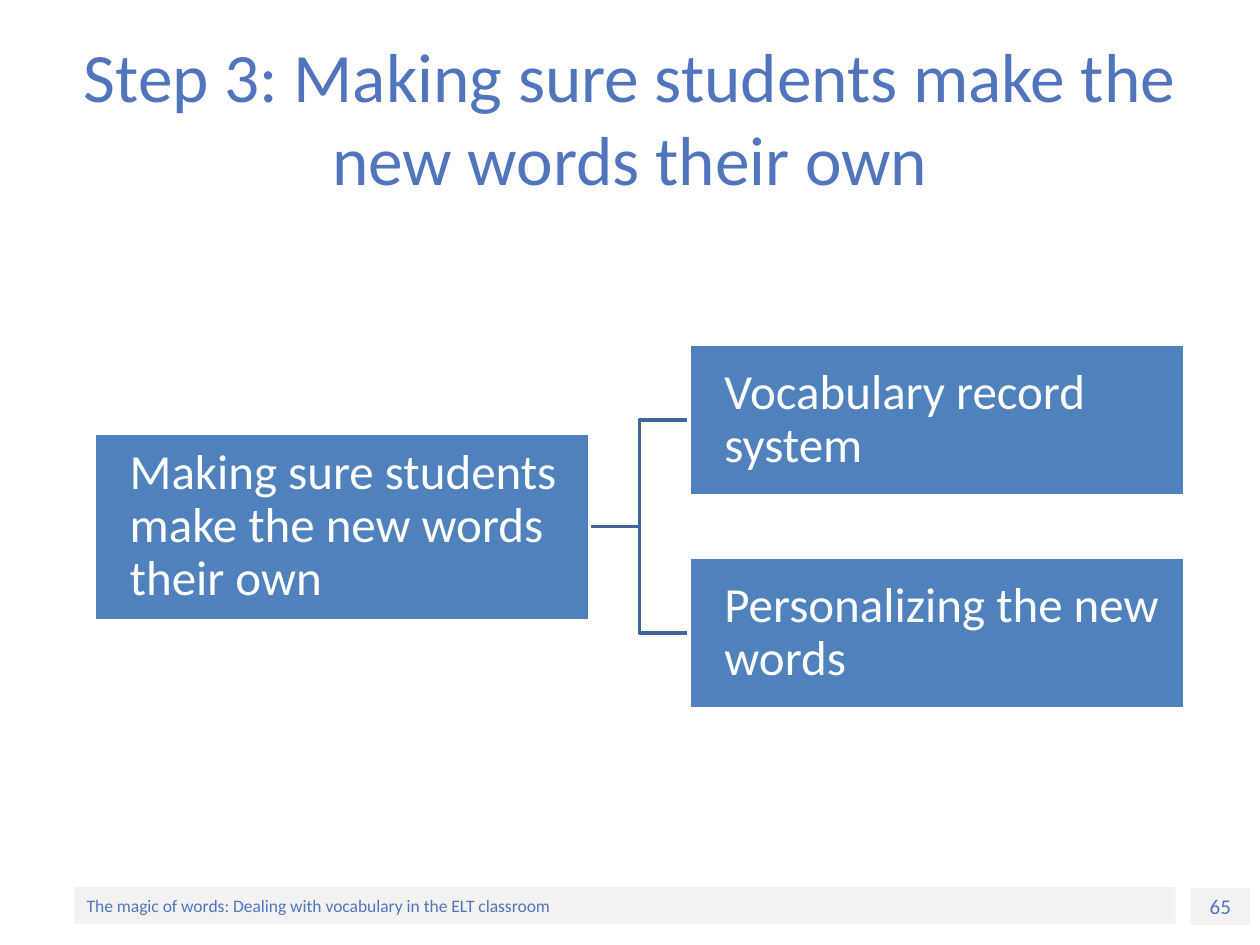
from pptx import Presentation
from pptx.dml.color import RGBColor
from pptx.enum.shapes import MSO_SHAPE as Shape
from pptx.enum.text import MSO_ANCHOR as Anchor, MSO_AUTO_SIZE as Auto, PP_ALIGN as Align
from pptx.util import Inches, Pt


def color(code):
    return RGBColor.from_string(code)


class Deck:
    font = "Calibri"
    ink = "5075BC"
    pale = "F2F2F2"
    blue = "4F81BD"
    dark = "3F6797"
    white = "FFFFFF"

    def __init__(self, slide):
        self.slide = slide

    def text(self, shape, lines, size, ink, align=Align.LEFT):
        frame = shape.text_frame
        frame.word_wrap = True
        frame.auto_size = Auto.NONE
        frame.vertical_anchor = Anchor.MIDDLE
        para = frame.paragraphs[0]
        para.alignment = align
        for i, line in enumerate(lines):
            if i:
                para.add_line_break()
            run = para.add_run()
            run.text = line
            run.font.name = self.font
            run.font.size = Pt(size)
            run.font.color.rgb = color(ink)
        return frame

    def title(self, line, x, y, w, h):
        shape = self.slide.shapes.title
        shape.left, shape.top = Inches(x), Inches(y)
        shape.width, shape.height = Inches(w), Inches(h)
        self.text(shape, [line], 39.6, self.ink, Align.CENTER)

    def rect(self, x, y, w, h, fill):
        shape = self.slide.shapes.add_shape(
            Shape.RECTANGLE, Inches(x), Inches(y), Inches(w), Inches(h))
        shape.shadow.inherit = False
        shape.fill.solid()
        shape.fill.fore_color.rgb = color(fill)
        shape.line.fill.background()
        return shape

    def band(self, line, x, y, w, h, size, align=Align.LEFT):
        self.text(self.rect(x, y, w, h, self.pale), [line], size, self.ink, align)

    def node(self, lines, x, mid, w, h):
        shape = self.rect(x, mid - h / 2, w, h, self.blue)
        shape.line.color.rgb = color(self.white)
        shape.line.width = Pt(2)
        frame = self.text(shape, lines, 28, self.white)
        frame.margin_left = Inches(0.28)
        frame.margin_top = frame.margin_right = frame.margin_bottom = Inches(0.02)
        frame.paragraphs[0].line_spacing = 0.9

    def elbow(self, x, y, end, mid):
        half = (x + end) / 2
        pen = self.slide.shapes.build_freeform(Inches(x), Inches(y))
        points = [(half, y), (half, mid), (end, mid)]
        pen.add_line_segments([(Inches(a), Inches(b)) for a, b in points], close=False)
        shape = pen.convert_to_shape()
        shape.shadow.inherit = False
        shape.fill.background()
        shape.line.color.rgb = color(self.dark)
        shape.line.width = Pt(2)


def main():
    show = Presentation()
    show.slide_width, show.slide_height = Inches(10), Inches(7.5)
    deck = Deck(show.slides.add_slide(show.slide_layouts[5]))

    deck.band("65", 9.45, 7.05, 0.47, 0.29, 12, Align.CENTER)
    deck.band("The magic of words: Dealing with vocabulary in the ELT classroom",
              0.59, 7.04, 8.74, 0.29, 10)
    deck.title("Step 3: Making sure students make the new words their own",
               0.5, 0.3, 9, 1.25)

    left, wide, gap, mid, step = 0.75, 3.93, 0.79, 4.18, 0.845
    edge = left + wide
    right = edge + gap
    leaves = [("Vocabulary record system", mid - step),
              ("Personalizing the new words", mid + step)]
    for _, y in leaves:
        deck.elbow(edge, mid, right, y)
    deck.node(["Making sure students", "make the new words their own"],
              left, mid, wide, 1.49)
    for line, y in leaves:
        deck.node([line], right, y, wide, 1.2)

    show.save("out.pptx")


if __name__ == "__main__":
    main()
